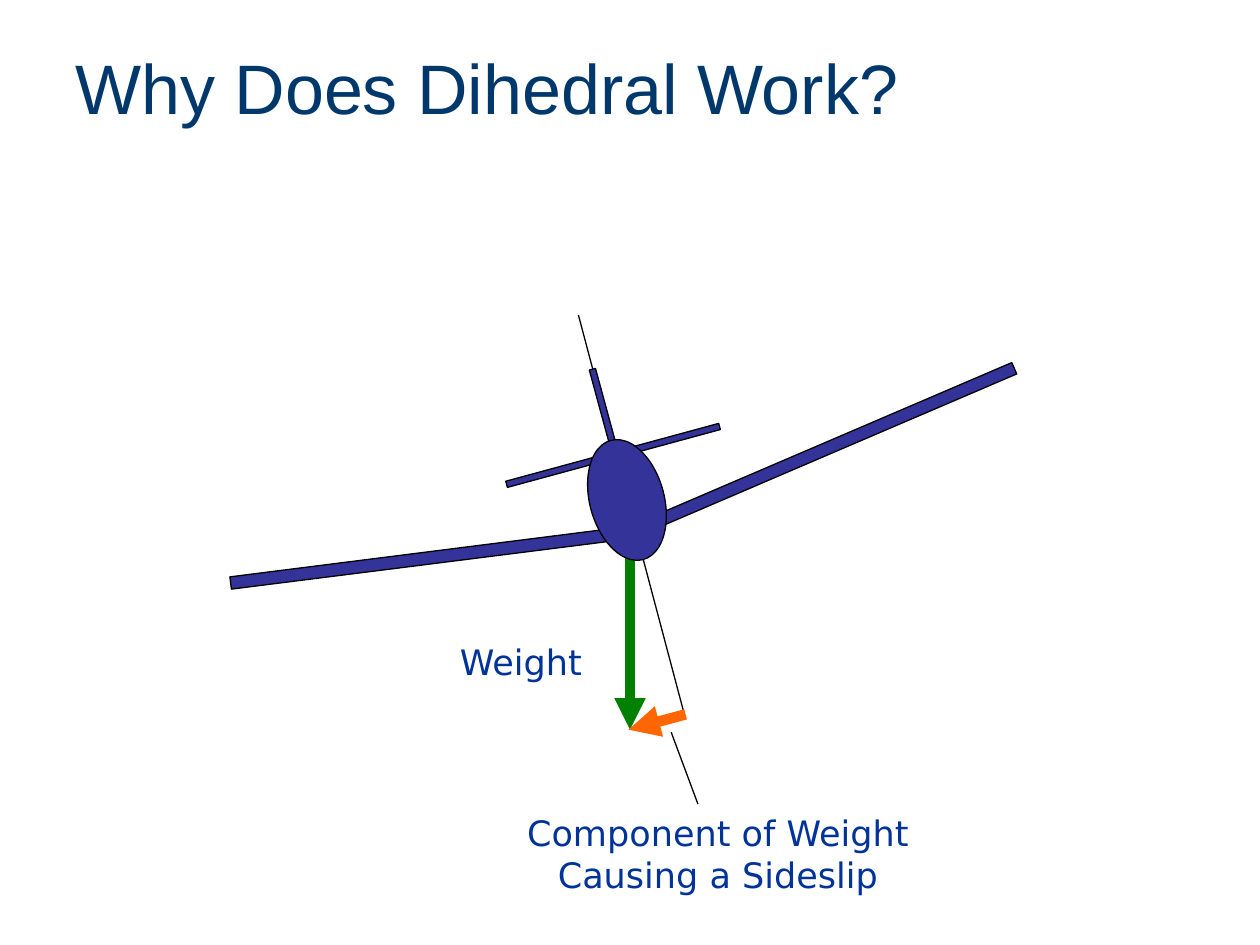
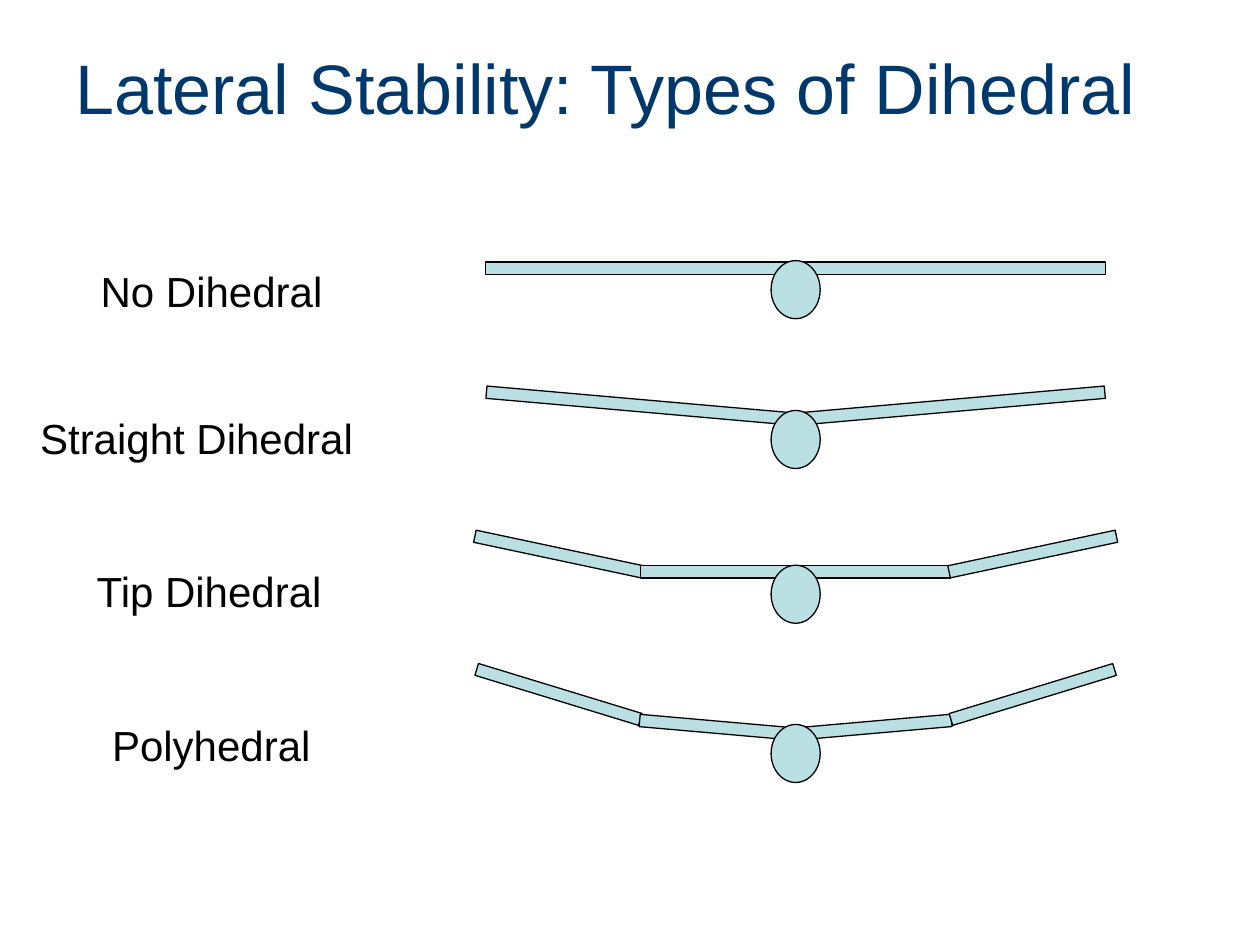
from lxml import etree
from pptx import Presentation
from pptx.dml.color import RGBColor
from pptx.enum import shapes, text
from pptx.oxml import ns
from pptx.util import Cm, Pt

BAR, OVAL = shapes.MSO_SHAPE.RECTANGLE, shapes.MSO_SHAPE.OVAL
TITLE = {"name": "Arial", "size": 40, "color": "00386B"}
FORCE_LABEL = {"name": "DejaVu Sans", "size": 20, "color": "003399"}
ROW_LABEL = {"name": "Arial", "size": 24, "color": "000000"}
BLACK, NAVY, AQUA = "000000", "333399", "BBE0E3"
GREEN, ORANGE = "008000", "FF6600"
THICKNESS = 0.25


def hex_color(value):
    """Turn a hex string into a colour."""
    return RGBColor.from_string(value)


def add_text(page, box, lines, style, wrap=False, **formats):
    """Write one paragraph per line into a text box."""
    frame = page.shapes.add_textbox(*map(Cm, box)).text_frame
    frame.word_wrap = wrap
    frame.vertical_anchor = formats.get("anchor", text.MSO_ANCHOR.TOP)
    for index, line in enumerate(lines):
        para = frame.add_paragraph() if index else frame.paragraphs[0]
        para.alignment = formats.get("align", text.PP_ALIGN.LEFT)
        span = para.add_run()
        span.text = line
        for key, value in {"name": style["name"], "size": Pt(style["size"])}.items():
            setattr(span.font, key, value)
        span.font.color.rgb = hex_color(style["color"])


def add_line(page, origin, start, end, color=BLACK, width=0.75, arrow=False):
    """Draw a straight line between two points given from an origin."""
    x, y = origin
    points = (x + start[0], y + start[1], x + end[0], y + end[1])
    line = page.shapes.add_connector(shapes.MSO_CONNECTOR.STRAIGHT, *map(Cm, points))
    line.line.color.rgb = hex_color(color)
    line.line.width = Pt(width)
    properties = line._element.spPr
    etree.SubElement(properties, ns.qn("a:effectLst"))
    if arrow:
        etree.SubElement(line.line._get_or_add_ln(), ns.qn("a:tailEnd"), type="triangle")


def add_part(aircraft, kind, center, size, angle, fill):
    """Add one outlined part of an aircraft, turned about its centre."""
    (x, y), (width, height) = center, size
    box = (x - width / 2, y - height / 2, width, height)
    part = aircraft.shapes.add_shape(kind, *map(Cm, box))
    part.shadow.inherit = False
    part.rotation = angle
    part.fill.solid()
    part.fill.fore_color.rgb = hex_color(fill)
    part.line.color.rgb = hex_color(BLACK)
    part.line.width = Pt(0.75)


def add_page(deck, title):
    """Add a blank page with the shared title."""
    page = deck.slides.add_slide(deck.slide_layouts[6])
    add_text(page, (1.27, 0.76, 22.86, 1.98), [title], TITLE, True,
             anchor=text.MSO_ANCHOR.MIDDLE)
    return page


def add_forces(page, origin):
    """Draw and label the forces around the fuselage centre."""
    x, y = origin
    add_text(page, (x - 3.62, y + 2.7, 3, 1.09), ["Weight"], FORCE_LABEL)
    add_line(page, origin, (0.06, 1.17), (0.06, 4.63), GREEN, 6, True)
    add_line(page, origin, (-0.98, -3.73), (1.15, 4.3))
    add_line(page, origin, (1.18, 4.32), (0.03, 4.63), ORANGE, 6, True)
    add_text(page, (x - 2.28, y + 6.15, 8.23, 1.96),
             ["Component of Weight", "Causing a Sideslip"], FORCE_LABEL,
             align=text.PP_ALIGN.CENTER)
    add_line(page, origin, (1.43, 6.13), (0.89, 4.68))


def add_banked_aircraft(page, origin):
    """Draw the banked aircraft around its fuselage centre."""
    bank = -15.2
    parts = {
        "fin": (BAR, (-0.48, -1.84), (0.13, 1.65), bank),
        "stabilizer": (BAR, (-0.28, -0.9), (4.45, 0.13), bank),
        "left wing": (BAR, (-4.17, 1.19), (7.7, THICKNESS), -7.2),
        "right wing": (BAR, (4.27, -1.14), (7.7, THICKNESS), -23.2),
        "fuselage": (OVAL, (0, 0), (1.5, 2.49), bank),
    }
    aircraft = page.shapes.add_group_shape()
    for kind, (x, y), size, angle in parts.values():
        add_part(aircraft, kind, (origin[0] + x, origin[1] + y), size, angle, NAVY)


def add_front_view(page, axis, top, panels):
    """Draw mirrored wing panels, listed from the tip inwards, and a fuselage."""
    left = [(-offset, drop, length, angle) for offset, drop, length, angle in panels]
    right = [(offset, drop, length, -angle)
             for offset, drop, length, angle in reversed(panels) if offset]
    aircraft = page.shapes.add_group_shape()
    for offset, drop, length, angle in left + right:
        add_part(aircraft, BAR, (axis + offset, top + drop),
                 (length, THICKNESS), angle, AQUA)
    add_part(aircraft, OVAL, (axis, top + 0.58), (0.99, 1.17), 0, AQUA)


def build_sideslip(deck):
    """Build the page on why dihedral works."""
    page = add_page(deck, "Why Does Dihedral Work?")
    center = (12.64, 10.08)
    add_forces(page, center)
    add_banked_aircraft(page, center)


def build_types(deck):
    """Build the page that compares types of dihedral."""
    page = add_page(deck, "Lateral Stability: Types of Dihedral")
    rows = [
        ("No Dihedral", (1.78, 5.23, 5), 5.26, [(3.12, 0.15, 6.25, 0)]),
        ("Straight Dihedral", (0.56, 8.2, 6.83), 8.28, [(3.12, -0.1, 6.25, 5)]),
        ("Tip Dihedral", (1.7, 11.28, 5.08), 11.4,
         [(4.78, -0.23, 3.45, 12), (0, 0.13, 6.25, 0)]),
        ("Polyhedral", (2.01, 14.38, 4.52), 14.61,
         [(4.78, -0.61, 3.45, 17), (1.59, 0.05, 3.12, 5)]),
    ]
    for label, label_box, top, panels in rows:
        add_front_view(page, 16.04, top, panels)
        add_text(page, (*label_box, 1.27), [label], ROW_LABEL)


def main():
    """Build and save the deck."""
    deck = Presentation()
    deck.slide_width, deck.slide_height = Cm(25.4), Cm(19.05)
    build_sideslip(deck)
    build_types(deck)
    deck.save("out.pptx")


if __name__ == "__main__":
    main()
